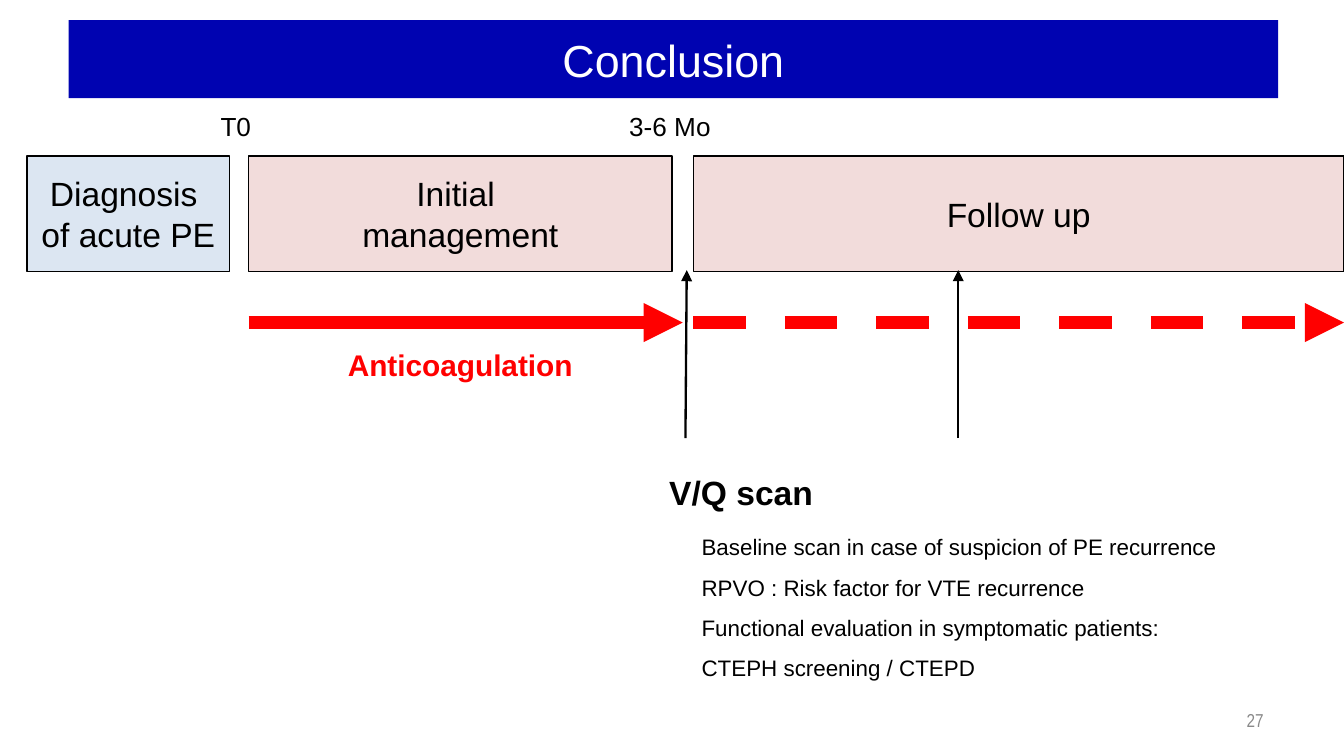
from lxml.etree import SubElement
from pptx import Presentation
from pptx.dml.color import RGBColor
from pptx.enum.dml import MSO_LINE
from pptx.enum.shapes import MSO_CONNECTOR, MSO_SHAPE
from pptx.enum.text import MSO_ANCHOR as ANCHOR, MSO_AUTO_SIZE, PP_ALIGN as ALIGN
from pptx.oxml.ns import qn
from pptx.util import Inches, Pt

BLACK = RGBColor(0x00, 0x00, 0x00)
WHITE = RGBColor(0xFF, 0xFF, 0xFF)
NAVY = RGBColor(0x00, 0x03, 0xB1)
BLUE = RGBColor(0xDC, 0xE6, 0xF2)
PINK = RGBColor(0xF2, 0xDC, 0xDB)
RED = RGBColor(0xFF, 0x00, 0x00)
GREY = RGBColor(0x89, 0x89, 0x89)

WIDTH = 10
HEIGHT = WIDTH * 9 / 16
PHASE_TOP, PHASE_HEIGHT = 1.16, 0.86
PHASE_BOTTOM = 2.01
START, FOLLOW_UP = 1.85, 5.16
THERAPY_Y, SCAN_Y = 2.4, 3.26

TITLE = "Conclusion"
PHASES = [
    (["Diagnosis ", "of acute PE"], 0.2, 1.51, BLUE, False),
    (["Initial ", "management"], START, 3.15, PINK, True),
    (["Follow up"], FOLLOW_UP, WIDTH - FOLLOW_UP, PINK, True),
]
TIMES = [("T0", 1.54, 0.43), ("3-6 Mo", 4.58, 0.81)]
THERAPY = [(START, 5.08, None), (FOLLOW_UP, WIDTH, MSO_LINE.DASH)]
SCANS = [(5.1, 5.11), (7.13, 7.13)]
FINDINGS = [
    "Baseline scan in case of suspicion of PE recurrence",
    "RPVO : Risk factor for VTE recurrence",
    "Functional evaluation in symptomatic patients:",
    "CTEPH screening / CTEPD",
]


def place(s, *box):
    s.left, s.top, s.width, s.height = map(Inches, box)


def write(s, lines, size, color=BLACK, bold=False, align=ALIGN.CENTER,
          anchor=ANCHOR.TOP, spacing=1.0, wrap=True, font="Arial"):
    tf = s.text_frame
    tf.text = "\n".join(lines)
    tf.auto_size = MSO_AUTO_SIZE.NONE
    tf.word_wrap, tf.vertical_anchor = wrap, anchor
    for p in tf.paragraphs:
        p.alignment, p.line_spacing, p.space_before = align, spacing, Pt(0)
        p.font.name, p.font.size, p.font.bold = font, Pt(size), bold
        p.font.color.rgb = color


def add_label(slide, text, box, size, **style):
    s = slide.shapes.add_textbox(*map(Inches, box))
    write(s, [text], size, **style)


def add_phase(slide, lines, left, width, fill, wrap):
    s = slide.shapes.add_shape(
        MSO_SHAPE.RECTANGLE, *map(Inches, (left, PHASE_TOP, width, PHASE_HEIGHT)))
    s.shadow.inherit = False
    s.fill.solid()
    s.fill.fore_color.rgb = fill
    s.line.color.rgb, s.line.width = BLACK, Pt(0.75)
    write(s, lines, 18, anchor=ANCHOR.MIDDLE, wrap=wrap)


def add_arrow(slide, x1, y1, x2, y2, color, width, dash=None):
    s = slide.shapes.add_connector(
        MSO_CONNECTOR.STRAIGHT, *map(Inches, (x1, y1, x2, y2)))
    s.line.color.rgb, s.line.width = color, Pt(width)
    if dash:
        s.line.dash_style = dash
    SubElement(s.line._get_or_add_ln(), qn("a:tailEnd"), type="triangle")
    SubElement(s._element.spPr, qn("a:effectLst"))


def main():
    """Build the slide on pulmonary embolism follow-up."""
    prs = Presentation()
    prs.slide_width, prs.slide_height = Inches(WIDTH), Inches(HEIGHT)
    slide = prs.slides.add_slide(prs.slide_layouts[1])

    title, body = slide.placeholders
    place(title, 0.51, 0.15, 9, 0.58)
    title.fill.solid()
    title.fill.fore_color.rgb = NAVY
    write(title, [TITLE], 24, WHITE, anchor=ANCHOR.MIDDLE)

    place(body, 5.12, 3.82, 4.06, 1.28)
    write(body, FINDINGS, 12, align=ALIGN.LEFT, spacing=1.5, wrap=False)
    for p in body.text_frame.paragraphs:
        pPr = p._p.get_or_add_pPr()
        pPr.set("marL", "0")
        pPr.set("indent", "0")
        pPr.insert_element_before(pPr.makeelement(qn("a:buNone"), {}),
                                  "a:tabLst", "a:defRPr", "a:extLst")

    for phase in PHASES:
        add_phase(slide, *phase)
    for text, left, width in TIMES:
        add_label(slide, text, (left, 0.77, width, 0.34), 14, wrap=False)
    for x1, x2, dash in THERAPY:
        add_arrow(slide, x1, THERAPY_Y, x2, THERAPY_Y, RED, 7, dash)
    for x1, x2 in SCANS:
        add_arrow(slide, x1, SCAN_Y, x2, PHASE_BOTTOM, BLACK, 1.25)

    add_label(slide, "Anticoagulation", (2.48, THERAPY_Y, 1.89, 0.45), 16,
              color=RED, bold=True, spacing=1.5)
    add_label(slide, "V/Q scan", (4.53, 3.28, 1.97, 0.62), 18,
              bold=True, spacing=1.5, anchor=ANCHOR.MIDDLE)
    add_label(slide, "27", (8.94, 5.21, 0.56, 0.3), 10, color=GREY,
              align=ALIGN.RIGHT, anchor=ANCHOR.MIDDLE, font="Arial Narrow")
    prs.save("out.pptx")


if __name__ == "__main__":
    main()
